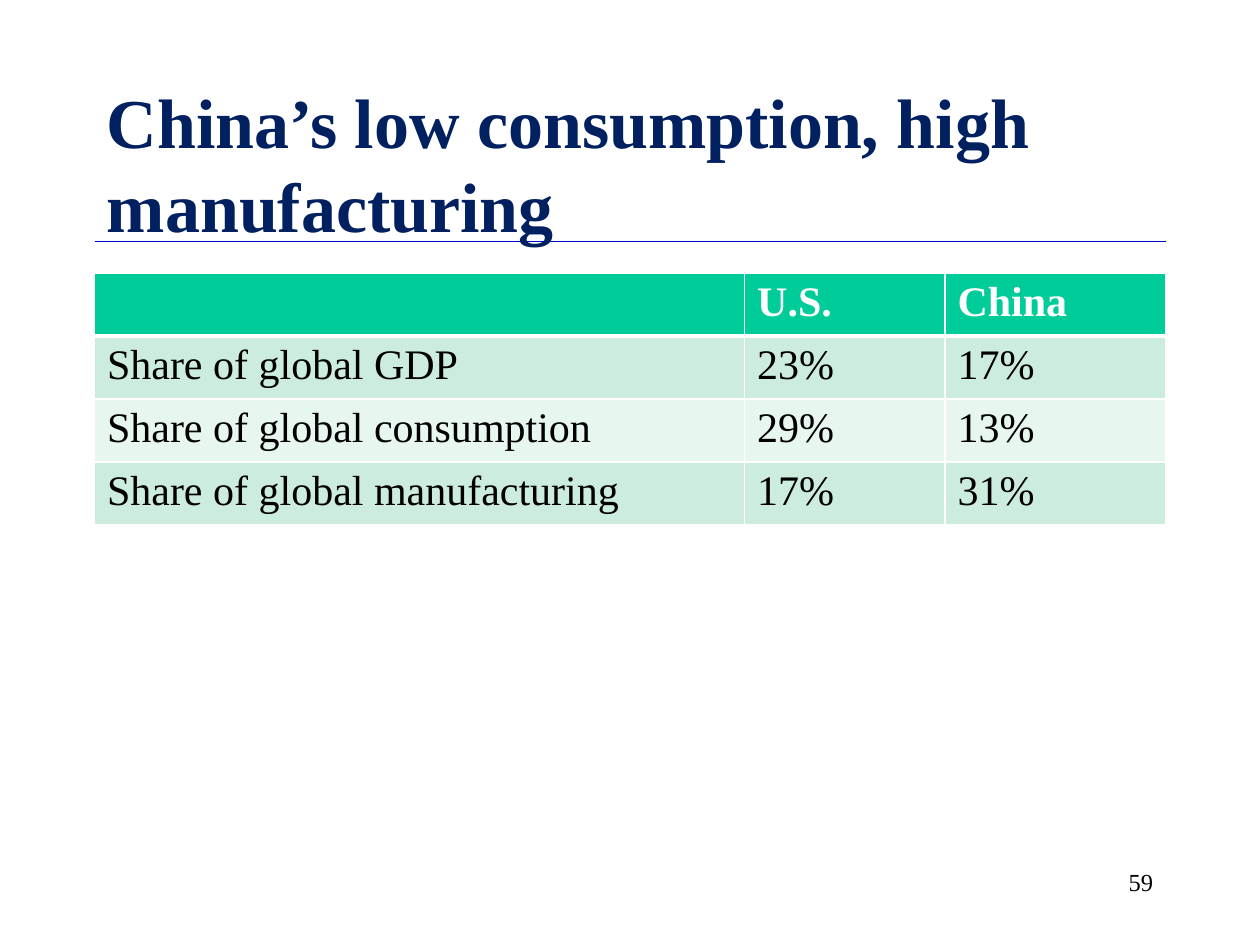
from lxml import etree
from pptx import Presentation
from pptx.dml.color import RGBColor
from pptx.enum.shapes import MSO_CONNECTOR as Connector
from pptx.enum.text import MSO_ANCHOR as Anchor, PP_ALIGN as Align
from pptx.oxml.ns import qn
from pptx.util import Pt

NAVY = RGBColor(0x00, 0x20, 0x60)
BLUE = RGBColor(0x00, 0x00, 0xCC)
GREEN = RGBColor(0x00, 0xCC, 0x99)
MINT = RGBColor(0xCC, 0xEC, 0xDE)
PALE = RGBColor(0xE7, 0xF6, 0xEF)
WHITE = RGBColor(0xFF, 0xFF, 0xFF)
BLACK = RGBColor(0x00, 0x00, 0x00)

FONT = "Times New Roman"
LEFT, WIDTH = 54, 612
COL_WIDTHS = (371.5, 114.5, 126)
ROW_HEIGHT = 29.5
ROWS = (
    ("", "U.S.", "China"),
    ("Share of global GDP", "23%", "17%"),
    ("Share of global consumption", "29%", "13%"),
    ("Share of global manufacturing", "17%", "31%"),
)


def format_text(p, text, size, color, bold=False):
    p.text = text
    for name, value in {"name": FONT, "size": Pt(size), "bold": bold}.items():
        setattr(p.font, name, value)
    p.font.color.rgb = color


def add_text(s, box, text, size, color, bold=False, align=Align.LEFT, anchor=Anchor.TOP):
    tf = s.shapes.add_textbox(*map(Pt, box)).text_frame
    tf.word_wrap = True
    tf.vertical_anchor = anchor
    p = tf.paragraphs[0]
    format_text(p, text, size, color, bold)
    p.alignment = align


def add_rule(s, y):
    line = s.shapes.add_connector(
        Connector.STRAIGHT, Pt(LEFT), Pt(y), Pt(LEFT + WIDTH), Pt(y))
    line.line.color.rgb = BLUE
    line.line.width = Pt(0.75)
    etree.SubElement(line._element.spPr, qn("a:effectLst"))


def set_borders(cell, widths):
    tc_pr = cell._tc.get_or_add_tcPr()
    for i, (side, width) in enumerate(widths.items()):
        ln = etree.Element(qn(f"a:{side}"), w=str(Pt(width)))
        fill = etree.SubElement(ln, qn("a:solidFill"))
        etree.SubElement(fill, qn("a:srgbClr"), val=str(WHITE))
        tc_pr.insert(i, ln)


def add_data_table(s, top):
    table = s.shapes.add_table(
        len(ROWS), len(COL_WIDTHS), Pt(LEFT), Pt(top),
        Pt(WIDTH), Pt(ROW_HEIGHT * len(ROWS))).table
    for col, width in zip(table.columns, COL_WIDTHS):
        col.width = Pt(width)
    for i, row in enumerate(ROWS):
        header = i == 0
        table.rows[i].height = Pt(ROW_HEIGHT)
        for j, text in enumerate(row):
            cell = table.cell(i, j)
            cell.fill.solid()
            cell.fill.fore_color.rgb = GREEN if header else MINT if i % 2 else PALE
            format_text(cell.text_frame.paragraphs[0], text, 24,
                        WHITE if header else BLACK, header)
            set_borders(cell, {"lnL": 1, "lnR": 1,
                               "lnT": 3 if i == 1 else 1,
                               "lnB": 3 if header else 1})


def main():
    prs = Presentation()
    prs.slide_width, prs.slide_height = Pt(720), Pt(540)
    s = prs.slides.add_slide(prs.slide_layouts[6])
    add_rule(s, 138)
    add_text(s, (LEFT, 48, WIDTH, 90), "China’s low consumption, high manufacturing",
             40, NAVY, bold=True, anchor=Anchor.MIDDLE)
    add_data_table(s, 156)
    add_text(s, (516, 492, 150, 36), "59", 14, BLACK, align=Align.RIGHT)
    prs.save("out.pptx")


if __name__ == "__main__":
    main()
